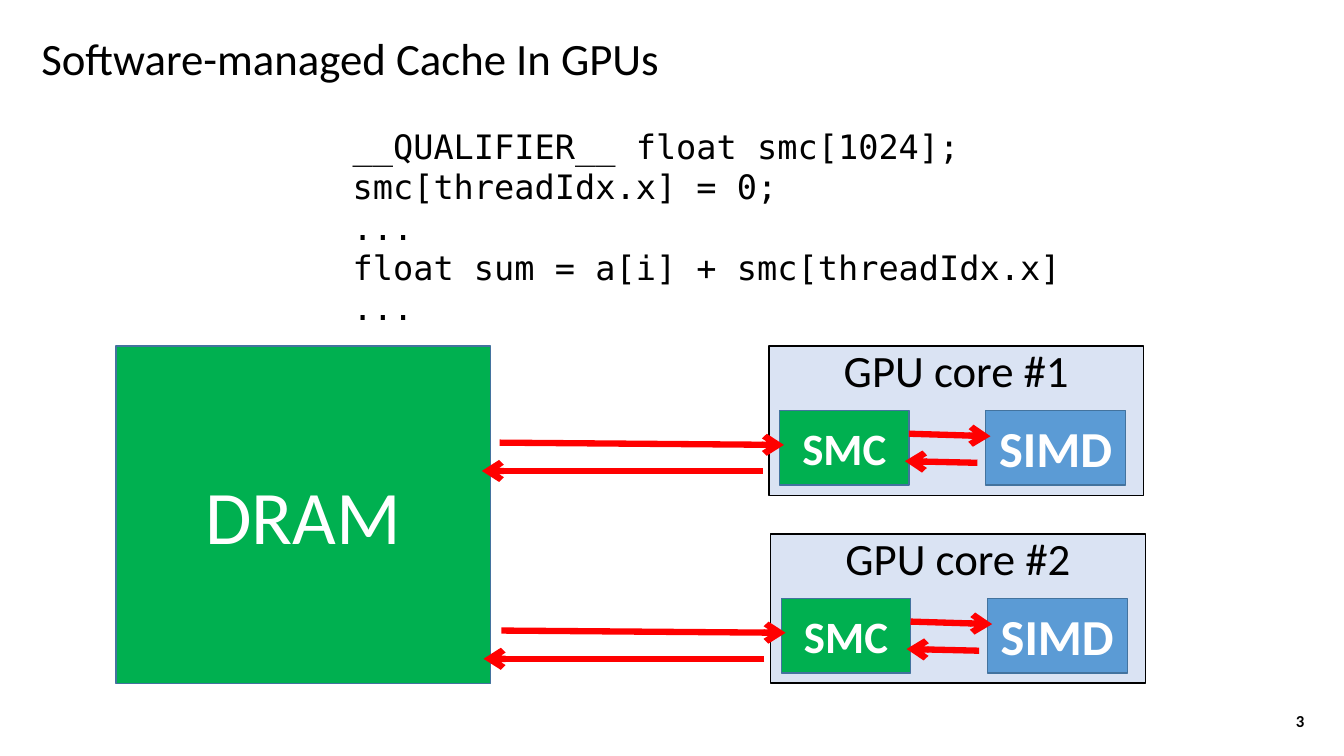
from lxml.etree import SubElement
from pptx import Presentation
from pptx.dml.color import RGBColor
from pptx.enum.shapes import MSO_CONNECTOR, MSO_SHAPE
from pptx.enum.text import MSO_ANCHOR, MSO_AUTO_SIZE, PP_ALIGN
from pptx.oxml.ns import qn
from pptx.util import Pt

CODE = [
    "__QUALIFIER__ float smc[1024];",
    "smc[threadIdx.x] = 0;",
    "...",
    "float sum = a[i] + smc[threadIdx.x]",
    "...",
]
MEMORY_GREEN = "00B050"
BLOCK_EDGE = "43739E"


def color(value):
    return RGBColor.from_string(value)


def place(shape, left, top, width, height):
    shape.left, shape.top = Pt(left), Pt(top)
    shape.width, shape.height = Pt(width), Pt(height)


def write(shape, *lines, size, font="Calibri", ink="000000", bold=False,
          align=PP_ALIGN.LEFT, anchor=MSO_ANCHOR.MIDDLE, spacing=None,
          wrap=True, auto_size=MSO_AUTO_SIZE.NONE):
    """Fill the shape with one paragraph per line of text."""
    frame = shape.text_frame
    frame.word_wrap = wrap
    frame.auto_size = auto_size
    frame.vertical_anchor = anchor
    for index, line in enumerate(lines):
        para = frame.add_paragraph() if index else frame.paragraphs[0]
        para.alignment = align
        para.line_spacing = spacing
        span = para.add_run()
        span.text = line
        span.font.name = font
        span.font.size = Pt(size)
        span.font.bold = bold
        span.font.color.rgb = color(ink)


def add_block(page, box, label, fill, edge=BLOCK_EDGE, ink="FFFFFF", **style):
    """Add a labelled rectangle at box = (left, top, width, height)."""
    block = page.shapes.add_shape(MSO_SHAPE.RECTANGLE, *map(Pt, box))
    block.shadow.inherit = False
    block.fill.solid()
    block.fill.fore_color.rgb = color(fill)
    block.line.color.rgb = color(edge)
    block.line.width = Pt(1)
    block.text_frame.margin_top = block.text_frame.margin_bottom = 0
    write(block, label, ink=ink, align=PP_ALIGN.CENTER, **style)


def add_arrow(page, start, end):
    arrow = page.shapes.add_connector(
        MSO_CONNECTOR.STRAIGHT, *map(Pt, (*start, *end)))
    arrow.line.color.rgb = color("FF0000")
    arrow.line.width = Pt(4.5)
    SubElement(arrow.line._get_or_add_ln(), qn("a:tailEnd"), type="arrow")
    SubElement(arrow._element.spPr, qn("a:effectLst"))


def add_title(page, box, text):
    place(page.shapes.title, *box)
    write(page.shapes.title, text, size=32, spacing=0.9)


def add_code(page, box):
    code = page.shapes.add_textbox(*map(Pt, box))
    write(code, *CODE, size=24, font="DejaVu Sans Mono", wrap=False,
          anchor=MSO_ANCHOR.TOP, auto_size=MSO_AUTO_SIZE.SHAPE_TO_FIT_TEXT)


def add_page_number(page, box, number):
    label = page.shapes.add_textbox(*map(Pt, box))
    write(label, str(number), size=12, bold=True, align=PP_ALIGN.RIGHT)


def add_core(page, box, number):
    """Add a GPU core with its memory, its SIMD unit and the data arrows."""
    left, top, _, _ = box
    add_block(page, box, f"GPU core #{number}", "DAE3F3", edge="000000",
              ink="000000", size=32, anchor=MSO_ANCHOR.TOP, spacing=Pt(36))
    add_block(page, (left + 154.8, top + 46, 100, 53.4), "SIMD", "5B9BD5",
              size=36, bold=True)
    add_block(page, (left + 7.8, top + 46, 92.2, 53.4), "SMC", MEMORY_GREEN,
              size=32, bold=True)
    arrows = [
        ((-192.3, 69), (10.8, 70.6)),    # DRAM to SMC
        ((100, 62.6), (158.3, 64.4)),    # SMC to SIMD
        ((149, 83.4), (97.2, 82.2)),     # SIMD to SMC
        ((-4.4, 89.2), (-205, 89.2)),    # SMC to DRAM
    ]
    for start, end in arrows:
        add_arrow(page, (left + start[0], top + start[1]),
                  (left + end[0], top + end[1]))


def main():
    deck = Presentation()
    deck.slide_width, deck.slide_height = Pt(960), Pt(540)
    page = deck.slides.add_slide(deck.slide_layouts.get_by_name("Title Only"))
    add_title(page, (22.3, 11.5, 916.6, 64), "Software-managed Cache In GPUs")
    add_page_number(page, (678.2, 500.4, 260.6, 28.8), 3)
    add_code(page, (244.8, 86.4, 527, 152.6))
    add_block(page, (82.8, 247.2, 267.8, 241), "DRAM", MEMORY_GREEN, size=54)
    for index in range(2):
        add_core(page, (549.2 + 1.2 * index, 247.2 + 134.2 * index, 267.8, 106.6),
                 index + 1)
    deck.save("out.pptx")


if __name__ == "__main__":
    main()
